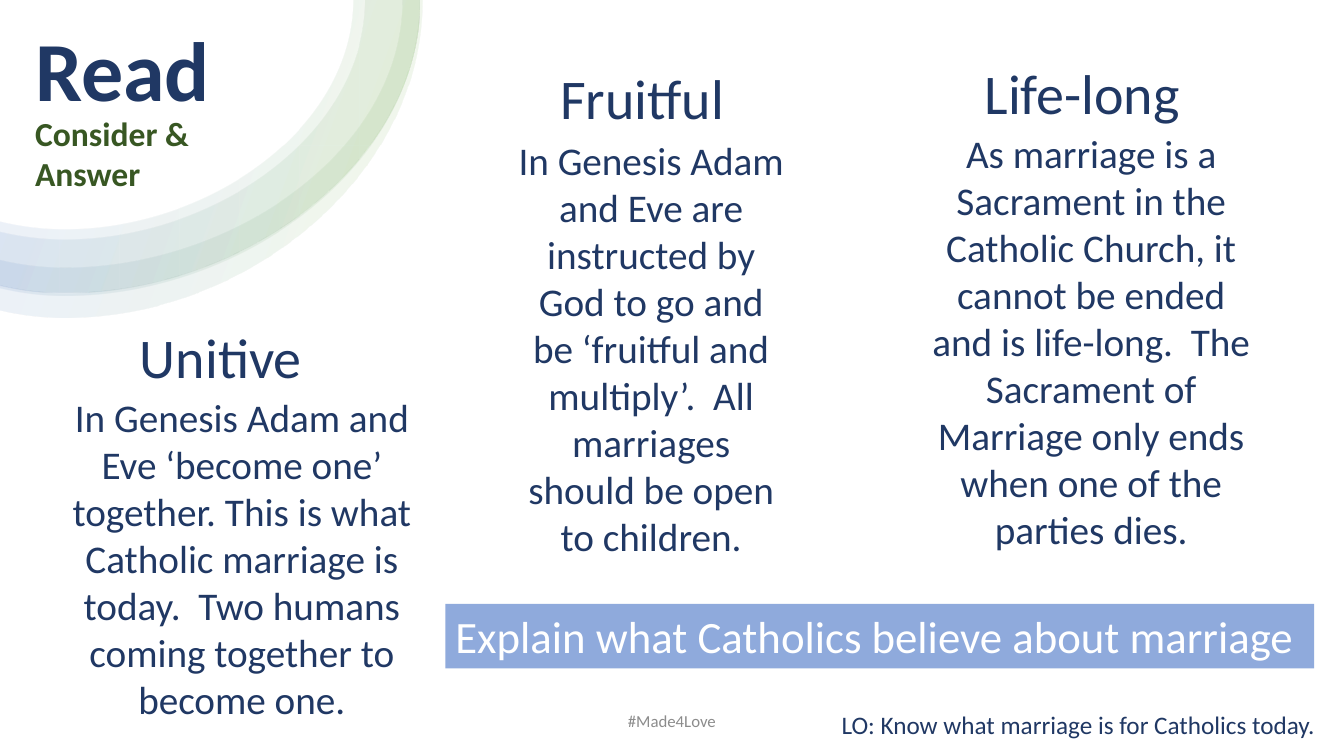
from lxml import etree
from pptx import Presentation
from pptx.dml.color import RGBColor
from pptx.enum.shapes import MSO_SHAPE
from pptx.enum.text import MSO_ANCHOR, MSO_AUTO_SIZE, PP_ALIGN
from pptx.oxml import parse_xml
from pptx.oxml.ns import nsdecls, qn
from pptx.util import Pt

LEFT, MID = PP_ALIGN.LEFT, PP_ALIGN.CENTER
TOP, CENTRE = MSO_ANCHOR.TOP, MSO_ANCHOR.MIDDLE
RECT, FIXED = MSO_SHAPE.RECTANGLE, MSO_AUTO_SIZE.NONE
NAVY, GREEN, GREY, WHITE, BLUE = "203864", "385723", "8C8C8C", "FFFFFF", "8FAADC"


def color(code):
    return RGBColor.from_string(code)


def write(text, box, shape=None, size=28, ink=NAVY, bold=False, align=LEFT,
          anchor=TOP, wrap=True, after=0):
    """Put text in the shape, or in a new text box, at box (left, top, width, height)."""
    area = [Pt(n) for n in box]
    shape = shape or shapes.add_textbox(*area)
    shape.left, shape.top, shape.width, shape.height = area
    frame = shape.text_frame
    frame.text = text
    frame.auto_size = FIXED
    frame.word_wrap = wrap
    frame.vertical_anchor = anchor
    for par in frame.paragraphs:
        par.alignment = align
        par.line_spacing = 1.0
        par.space_before, par.space_after = Pt(0), Pt(after)
        font = par.runs[0].font
        font.name, font.size, font.bold = "Calibri", Pt(size), bold
        font.color.rgb = color(ink)


deck = Presentation()
deck.slide_width, deck.slide_height = Pt(960), Pt(540)
slide = deck.slides.add_slide(deck.slide_layouts[5])
shapes = slide.shapes
slide.background.fill.solid()
slide.background.fill.fore_color.rgb = color(WHITE)

stops = [(2, WHITE), (16, "70AD47"), (85, "4472C4"), (100, WHITE)]
marks = "".join(
    f'<a:gs pos="{pos * 1000}"><a:srgbClr val="{code}"><a:alpha val="10000"/></a:srgbClr></a:gs>'
    for pos, code in stops)
blend = (f'<a:gradFill {nsdecls("a")} rotWithShape="1"><a:gsLst>{marks}</a:gsLst>'
         f'<a:lin ang="{200 * 60000}" scaled="0"/></a:gradFill>')

# Each edge of a band runs from the slide's top, at x = reach, down to its
# lowest point, y = depth, and then up a little to the slide's left side.
LOW, RISE = 46, 5.5
bands = [  # outer reach and depth, inner reach and depth
    ((300, 208.8), (252, 163.4)),
    ((300, 208.8), (260.6, 170.6)),
    ((300, 211), (287.3, 190.8)),
    ((301.7, 226.8), (299.5, 208.8)),
]
for band in bands:
    outer, inner = [
        [(Pt(x), Pt(y)) for x, y in (
            (reach, 0), (reach, 0.56 * depth), ((reach + LOW) / 2, depth), (LOW, depth),
            (LOW * 2 / 3, depth), (LOW / 3, depth - RISE / 3), (0, depth - RISE))]
        for reach, depth in band]
    pen = shapes.build_freeform(*outer[0], scale=1.0)
    pen.add_line_segments(outer[1:] + inner[::-1], close=True)
    ring = pen.convert_to_shape()
    ring.shadow.inherit = False
    ring.line.fill.background()
    props = ring._element.spPr
    props.find(qn("a:custGeom")).addnext(parse_xml(blend))
    route = next(props.iter(qn("a:path")))
    lines = route.findall(qn("a:lnTo"))
    for start in (0, 3, 7, 10):  # three points make a curve; point 6 stays a line
        curve = etree.Element(qn("a:cubicBezTo"))
        lines[start].addprevious(curve)
        for line in lines[start:start + 3]:
            curve.append(line[0])
            route.remove(line)

write("#Made4Love", (318, 500.4, 324, 28.8), size=12, ink=GREY, align=MID,
      anchor=CENTRE, after=6)
write("Consider &\nAnswer", (18, 77, 147.6, 65.5), size=24, ink=GREEN, bold=True)
write("Read", (18, 8.6, 214.6, 80), shape=shapes.title, size=60, bold=True)

topics = [
    ("Unitive", (92.9, 226.8, 147.6, 55.4),
     "In Genesis Adam and Eve ‘become one’ together. This is what Catholic marriage "
     "is today.  Two humans coming together to become one.",
     (33.8, 277.2, 277.9, 244.8)),
    ("Fruitful", (393.1, 41.8, 144, 55.4),
     "In Genesis Adam and Eve are instructed by God to go and be ‘fruitful and "
     "multiply’.  All marriages should be open to children.",
     (360.7, 93.6, 208.8, 312.5)),
    ("Life-long", (696.2, 38.2, 167, 55.4),
     "As marriage is a Sacrament in the Catholic Church, it cannot be ended and is "
     "life-long.  The Sacrament of Marriage only ends when one of the parties dies.",
     (655.2, 88.6, 248.4, 312.5)),
]
for head, spot, body, area in topics:
    write(head, spot, size=40)
    write(body, area, align=MID)

write("LO: Know what marriage is for Catholics today.", (594, 503.3, 365.8, 28.8),
      size=18, wrap=False)

task = shapes.add_shape(RECT, 0, 0, Pt(1), Pt(1))
task.shadow.inherit = False
task.fill.solid()
task.fill.fore_color.rgb = color(BLUE)
task.line.fill.background()
write("Explain what Catholics believe about marriage", (318.2, 431.3, 620.6, 46.1),
      shape=task, size=32, ink=WHITE)

deck.save("out.pptx")
